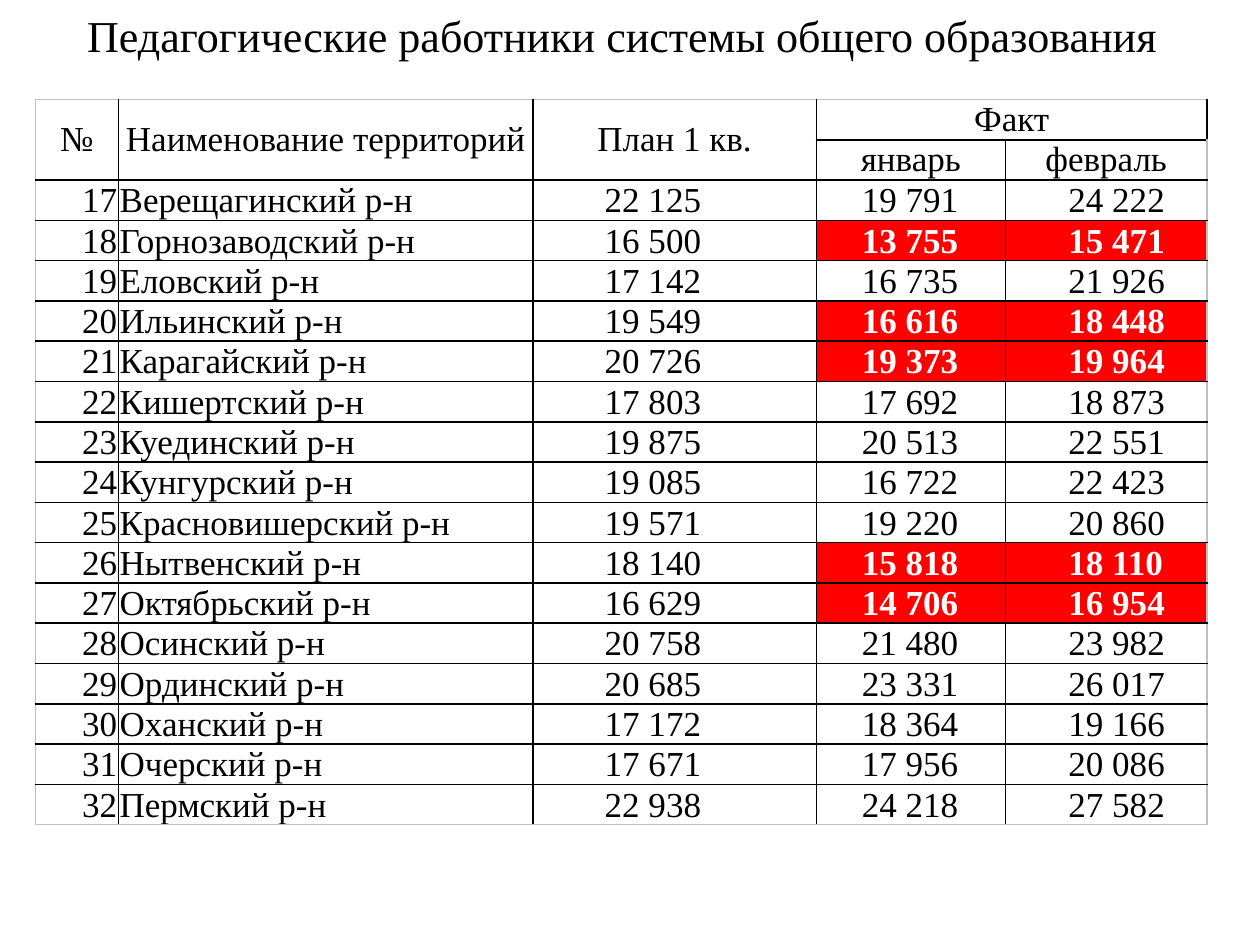
import pptx
import pptx.util
import pptx.dml.color
import pptx.enum.text
import pptx.oxml.ns
from lxml import etree

Inches, Pt = pptx.util.Inches, pptx.util.Pt
Align = pptx.enum.text.PP_ALIGN
Anchor = pptx.enum.text.MSO_ANCHOR
qn = pptx.oxml.ns.qn

FONT = "Times New Roman"
COLORS = {"text": "000000", "line": "000000", "edge": "C0C0C0",
          "alert": "FF0000", "light": "FFFFFF"}


def write(frame, text, size, align, color="text", bold=False):
    para = frame.paragraphs[0]
    para.alignment = align
    run = para.add_run()
    run.text = text
    run.font.name = FONT
    run.font.size = Pt(size)
    run.font.bold = bold
    run.font.color.rgb = pptx.dml.color.RGBColor.from_string(COLORS[color])


def border(cell, side, color, width):
    props = cell._tc.get_or_add_tcPr()
    line = etree.SubElement(props, qn("a:" + side), w=str(Pt(width)))
    fill = etree.SubElement(line, qn("a:solidFill"))
    etree.SubElement(fill, qn("a:srgbClr"), val=COLORS[color])


deck = pptx.Presentation()
deck.slide_width, deck.slide_height = Inches(10), Inches(7.5)
slide = deck.slides.add_slide(deck.slide_layouts[5])

# Title
title = slide.shapes.title
title.left, title.top = Inches(0.04), Inches(0.05)
title.width, title.height = Inches(9.8), Inches(0.46)
frame = title.text_frame
frame.word_wrap = True
frame.auto_size = pptx.enum.text.MSO_AUTO_SIZE.NONE
frame.vertical_anchor = Anchor.MIDDLE
write(frame, "Педагогические работники системы общего образования", 25.2, Align.CENTER)

# Table data: plan for the quarter, then January and February
HEAD = [["№", "Наименование территорий", "План 1 кв.", "Факт", ""],
        ["", "", "", "январь", "февраль"]]
AREAS = [
    ("Верещагинский", 22125, 19791, 24222),
    ("Горнозаводский", 16500, 13755, 15471),
    ("Еловский", 17142, 16735, 21926),
    ("Ильинский", 19549, 16616, 18448),
    ("Карагайский", 20726, 19373, 19964),
    ("Кишертский", 17803, 17692, 18873),
    ("Куединский", 19875, 20513, 22551),
    ("Кунгурский", 19085, 16722, 22423),
    ("Красновишерский", 19571, 19220, 20860),
    ("Нытвенский", 18140, 15818, 18110),
    ("Октябрьский", 16629, 14706, 16954),
    ("Осинский", 20758, 21480, 23982),
    ("Ординский", 20685, 23331, 26017),
    ("Оханский", 17172, 18364, 19166),
    ("Очерский", 17671, 17956, 20086),
    ("Пермский", 22938, 24218, 27582),
]
FIRST = 17
ALERTS = {18, 20, 21, 26, 27}
rows = HEAD + [
    [str(num), name + " р-н"] + [f"{val:,}".replace(",", " ") for val in vals]
    for num, (name, *vals) in enumerate(AREAS, FIRST)]

# Table grid
WIDTHS = [0.66, 3.29, 2.25, 1.5, 1.6]
INDENTS = [0.01, 0.01, 0.57, 0.36, 0.5]
HEIGHT = 0.32
count, span = len(rows), len(WIDTHS)
table = slide.shapes.add_table(
    count, span, Inches(0.28), Inches(0.79),
    Inches(sum(WIDTHS)), Inches(HEIGHT * count)).table
table.first_row = table.horz_banding = False
for col, width in zip(table.columns, WIDTHS):
    col.width = Inches(width)
for row in table.rows:
    row.height = Inches(HEIGHT)

# Merged header cells
for c in range(3):
    table.cell(0, c).merge(table.cell(1, c))
table.cell(0, 3).merge(table.cell(0, 4))

# Cells
for r, row in enumerate(rows):
    head = r < len(HEAD)
    for c, text in enumerate(row):
        cell = table.cell(r, c)
        alert = not head and c > 2 and int(row[0]) in ALERTS
        cell.margin_left = Inches(0.01 if head else INDENTS[c])
        cell.margin_right = Inches(0.01)
        cell.margin_top = cell.margin_bottom = 0
        cell.vertical_anchor = Anchor.MIDDLE if head else Anchor.BOTTOM

        # Grey outer edge, black inner lines
        edges = {"lnL": c == 0, "lnR": c == span - 1,
                 "lnT": r == 0, "lnB": r == count - 1}
        for side, outer in edges.items():
            border(cell, side, "edge" if outer else "line", 1)

        if alert:
            cell.fill.solid()
            cell.fill.fore_color.rgb = pptx.dml.color.RGBColor.from_string(COLORS["alert"])
        else:
            cell.fill.background()
        if text:
            align = Align.CENTER if head else Align.RIGHT if c == 0 else Align.LEFT
            write(cell.text_frame, text, 20, align, "light" if alert else "text", alert)

deck.save("out.pptx")
